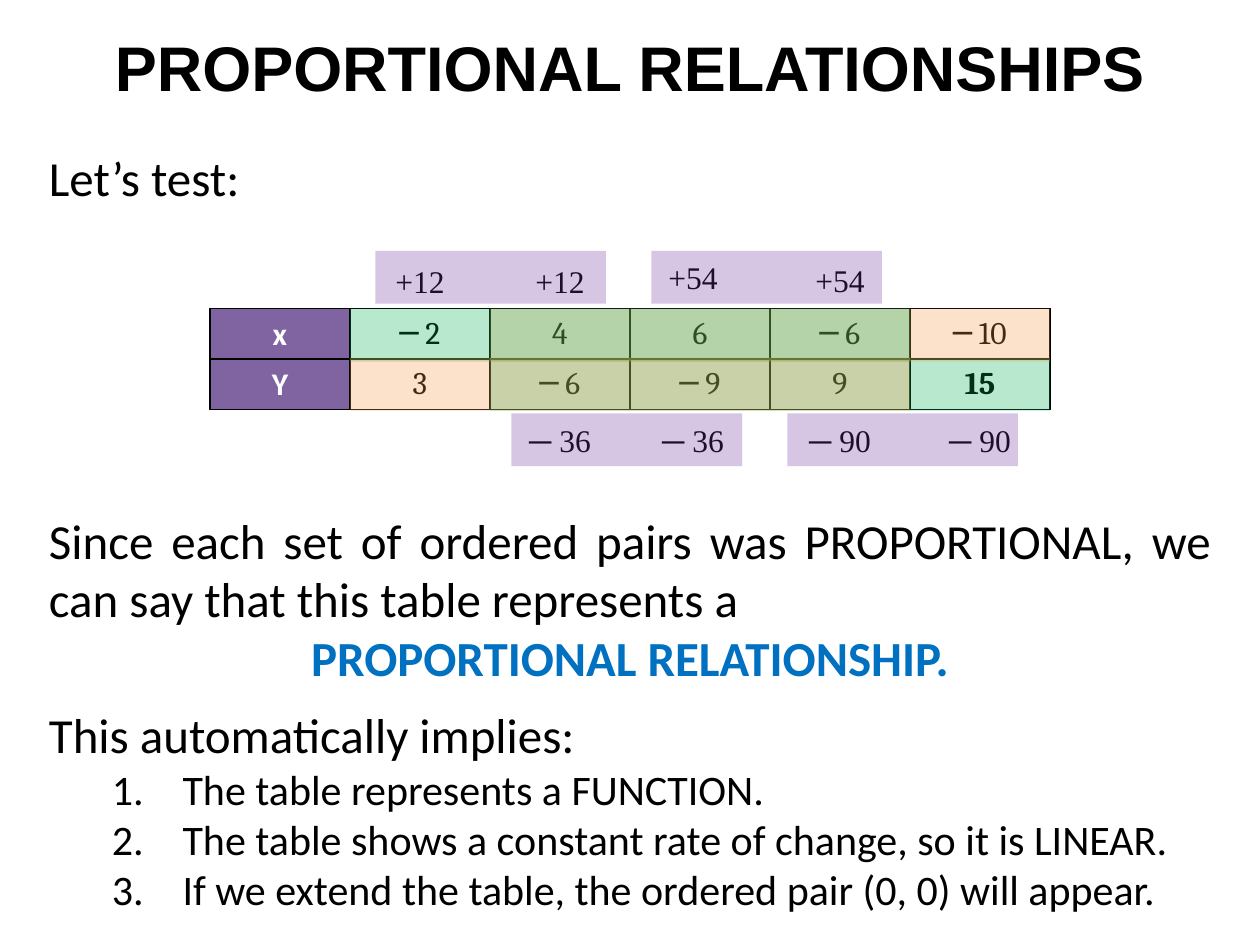
from dataclasses import dataclass

from lxml.etree import SubElement
from pptx import Presentation
from pptx.dml.color import RGBColor
from pptx.enum.shapes import MSO_SHAPE
from pptx.enum.text import MSO_ANCHOR, PP_ALIGN
from pptx.oxml import parse_xml
from pptx.oxml.ns import nsdecls, qn
from pptx.util import Inches, Pt

WIDTH, HEIGHT = 10, 7.5
COLUMN = WIDTH / 9
TABLE_LEFT, TABLE_TOP, ROW = WIDTH / 6, 2.45, 0.4
BAND_HEIGHT = 0.42
BLACK, WHITE, BLUE = "000000", "FFFFFF", "0070C0"
HEADER, GREEN, ORANGE, PURPLE = "8064A2", "00B050", "F79646", "7030A0"

TABLE_ROWS = [
    ["x", "─ 2", "4", "6", "─ 6", "─ 10"],
    ["Y", "3", "─ 6", "─ 9", "9", "15"],
]
IMPLICATIONS = [
    "The table represents a FUNCTION.",
    "The table shows a constant rate of change, so it is LINEAR.",
    "If we extend the table, the ordered pair (0, 0) will appear.",
]


@dataclass(frozen=True)
class Product:
    """A cross product, placed by table column and top edge."""
    text: str
    column: float
    top: float


@dataclass(frozen=True)
class Band:
    """A translucent rectangle over the slide."""
    left: float
    top: float
    width: float
    color: str


PRODUCTS = [
    Product("+12", 1, 2.03), Product("+12", 2, 2.03),
    Product("+54", 2.95, 2), Product("+54", 4, 2.02),
    Product("─ 36", 2, 3.29), Product("─ 36", 2.95, 3.29),
    Product("─ 90", 4, 3.29), Product("─ 90", 5, 3.29),
]


def rgb(color: str) -> RGBColor:
    """Turn a hex string into a colour."""
    return RGBColor.from_string(color)


def column_left(column: float) -> float:
    """Return the left edge of a table column."""
    return TABLE_LEFT + column * COLUMN


def write(para, text: str, *, size: float = 28, font: str = "Calibri", color: str = BLACK,
          bold: bool = False, align=PP_ALIGN.JUSTIFY, after: float = 0) -> None:
    """Write one formatted span into a paragraph."""
    para.alignment = align
    para.space_after = Pt(after)
    span = para.add_run()
    span.text = text
    span.font.size, span.font.name, span.font.bold = Pt(size), font, bold
    span.font.color.rgb = rgb(color)


def add_box(page, left: float, top: float, width: float, height: float):
    """Add a wrapping text box and return its frame."""
    box = page.shapes.add_textbox(Inches(left), Inches(top), Inches(width), Inches(height))
    box.text_frame.word_wrap = True
    return box.text_frame


def add_band(page, band: Band) -> None:
    """Draw a borderless rectangle at 28 percent opacity."""
    shape = page.shapes.add_shape(MSO_SHAPE.RECTANGLE, Inches(band.left), Inches(band.top),
                                  Inches(band.width), Inches(BAND_HEIGHT))
    shape.shadow.inherit = False
    shape.line.fill.background()
    shape.fill.solid()
    shape.fill.fore_color.rgb = rgb(band.color)
    color = next(shape.fill._xPr.iter(qn("a:srgbClr")))
    SubElement(color, qn("a:alpha")).set("val", "28000")


def outline_cell(cell) -> None:
    """Give a cell a black border of one point on all sides."""
    properties = cell._tc.get_or_add_tcPr()
    for index, side in enumerate(("lnL", "lnR", "lnT", "lnB")):
        properties.insert(index, parse_xml(
            f'<a:{side} {nsdecls("a")} w="12700"><a:solidFill>'
            f'<a:srgbClr val="{BLACK}"/></a:solidFill></a:{side}>'))


def add_value_table(page) -> None:
    """Add the table of ordered pairs."""
    rows, columns = len(TABLE_ROWS), len(TABLE_ROWS[0])
    frame = page.shapes.add_table(rows, columns, Inches(TABLE_LEFT), Inches(TABLE_TOP),
                                  Inches(columns * COLUMN), Inches(rows * ROW))
    table = frame.table
    table.first_row = table.horz_banding = False
    for r, values in enumerate(TABLE_ROWS):
        for c, value in enumerate(values):
            cell, header = table.cell(r, c), c == 0
            cell.vertical_anchor = MSO_ANCHOR.MIDDLE
            cell.fill.solid()
            cell.fill.fore_color.rgb = rgb(HEADER if header else WHITE)
            outline_cell(cell)
            write(cell.text_frame.paragraphs[0], value, size=18, align=PP_ALIGN.CENTER,
                  font="Calibri" if header else "Cambria", color=WHITE if header else BLACK,
                  bold=header or value == "15")


def add_cross_pairs(page) -> None:
    """Tint both diagonals of each pair of neighbouring columns."""
    upper, lower = TABLE_TOP, TABLE_TOP + ROW - 0.01
    for column in range(1, 5):
        left, right = column_left(column), column_left(column + 1)
        for x, y, color in ((right, lower, GREEN), (left, upper, GREEN),
                            (left, lower, ORANGE), (right, upper, ORANGE)):
            add_band(page, Band(x, y, COLUMN, color))


def add_products(page) -> None:
    """Write the cross products and highlight each equal pair."""
    for product in PRODUCTS:
        frame = add_box(page, column_left(product.column + 0.125), product.top,
                        0.75 * COLUMN, ROW)
        write(frame.paragraphs[0], product.text, size=18, font="Times New Roman",
              align=PP_ALIGN.CENTER)
    for left, top in ((2.98, 1.99), (4.06, 3.28)):
        for step in range(2):
            add_band(page, Band(left + 2.19 * step, top, 1.83, PURPLE))


def add_conclusion(page) -> None:
    """Write the conclusion and its numbered implications."""
    frame = add_box(page, 0.29, 4, WIDTH - 0.58, 3.34)
    write(frame.paragraphs[0], "Since each set of ordered pairs was PROPORTIONAL, "
          "we can say that this table represents a")
    write(frame.add_paragraph(), "PROPORTIONAL RELATIONSHIP.", color=BLUE, bold=True,
          align=PP_ALIGN.CENTER, after=10)
    write(frame.add_paragraph(), "This automatically implies:")
    for text in IMPLICATIONS:
        para = frame.add_paragraph()
        para.level = 1
        write(para, text, size=24)
        properties = para._p.get_or_add_pPr()
        properties.set("marL", str(Inches(1.06)))
        properties.set("indent", str(Inches(-0.56)))
        SubElement(properties, qn("a:buFont")).set("typeface", "+mj-lt")
        SubElement(properties, qn("a:buAutoNum")).set("type", "arabicPeriod")


def main() -> None:
    """Build and save the slide."""
    deck = Presentation()
    deck.slide_width, deck.slide_height = Inches(WIDTH), Inches(HEIGHT)
    page = deck.slides.add_slide(deck.slide_layouts[6])
    title = add_box(page, 0.04, 0.11, WIDTH - 0.08, 0.83)
    title.vertical_anchor = MSO_ANCHOR.MIDDLE
    write(title.paragraphs[0], "PROPORTIONAL RELATIONSHIPS", size=36, font="Arial",
          bold=True, align=PP_ALIGN.CENTER)
    write(add_box(page, 0.29, 1.12, WIDTH - 0.58, 0.57).paragraphs[0], "Let’s test:")
    add_value_table(page)
    add_cross_pairs(page)
    add_products(page)
    add_conclusion(page)
    deck.save("out.pptx")


if __name__ == "__main__":
    main()
